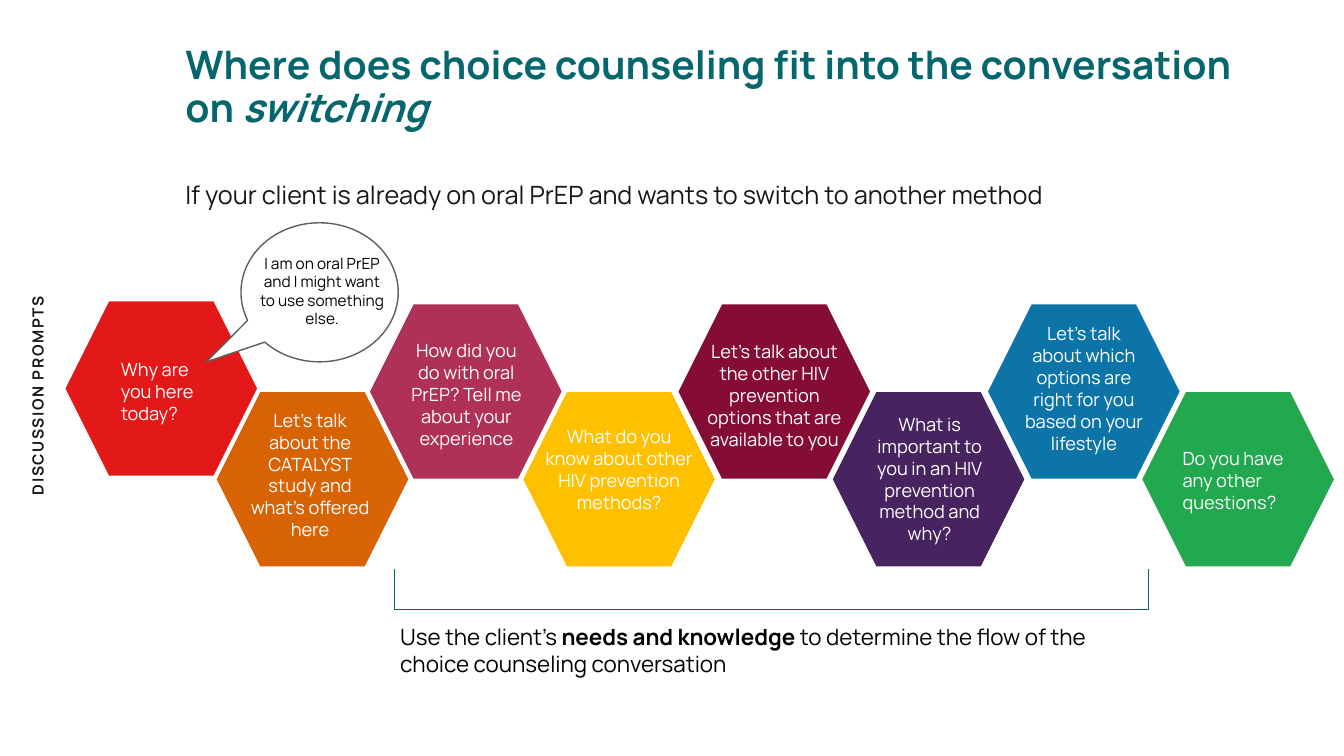
"""Build the slide on choice counseling when a client wants to switch method."""
from pptx import Presentation
from pptx.dml.color import RGBColor
from pptx.enum.shapes import MSO_SHAPE
from pptx.enum.text import MSO_ANCHOR, PP_ALIGN
from pptx.util import Inches, Pt

TEAL = RGBColor(0x05, 0x67, 0x6D)
INK = RGBColor(0x18, 0x17, 0x17)
BLACK = RGBColor(0, 0, 0)
WHITE = RGBColor(0xFF, 0xFF, 0xFF)
GRAY = RGBColor(0x62, 0x5E, 0x58)
RED = RGBColor(0xE2, 0x19, 0x18)
ORANGE = RGBColor(0xD7, 0x63, 0x05)
ROSE = RGBColor(0xAF, 0x31, 0x58)
YELLOW = RGBColor(0xFF, 0xC0, 0x00)
MAROON = RGBColor(0x84, 0x0C, 0x36)
PURPLE = RGBColor(0x47, 0x24, 0x5F)
BLUE = RGBColor(0x0D, 0x74, 0xA8)
GREEN = RGBColor(0x22, 0xA8, 0x4F)

FONT = "Manrope"
LEFT, CENTER = PP_ALIGN.LEFT, PP_ALIGN.CENTER
HEXAGON_SIZE = (1.9, 1.73)
LOWER_ROW_DROP = 0.87

TITLE = [
    ("Where does choice counseling fit into the conversation on ", {"bold": True}),
    ("switching", {"bold": True, "italic": True}),
]
SUBTITLE = [("If your client is already on oral PrEP and wants to switch to another method", {})]
ADVICE = [
    ("Use the client’s ", {}),
    ("needs and knowledge", {"bold": True}),
    (" to determine the flow of the choice counseling conversation", {}),
]
ANSWER = [("I am on oral PrEP and I might want to use something else.", {})]
SIDE_LABEL = [("DISCUSSION PROMPTS", {"bold": True})]

# Each prompt: hexagon left, upper-row top, color, text frame, alignment, wording
PROMPTS = [
    (0.65, 2.99, RED, (1.1, 3.51, 1.14, 0.75), LEFT, "Why are you here today?"),
    (2.15, 3.02, ORANGE, (2.36, 4.01, 1.43, 1.63), CENTER,
     "Let’s talk about the CATALYST study and what’s offered here"),
    (3.67, 3.02, ROSE, (3.92, 3.32, 1.41, 1.19), CENTER,
     "How did you do with oral PrEP? Tell me about your experience"),
    (5.19, 3.02, YELLOW, (5.29, 4.17, 1.7, 1.19), CENTER,
     "What do you know about other HIV prevention methods?"),
    (6.73, 3.02, MAROON, (6.89, 3.33, 1.58, 1.41), CENTER,
     "Let’s talk about the other HIV prevention options that are available to you"),
    (8.26, 3.02, PURPLE, (8.53, 4.05, 1.38, 1.41), CENTER,
     "What is important to you in an HIV prevention method and why?"),
    (9.8, 3.02, BLUE, (10.06, 3.15, 1.38, 1.41), CENTER,
     "Let’s talk about which options are right for you based on your lifestyle"),
    (11.33, 3.02, GREEN, (11.63, 4.39, 1.52, 0.75), LEFT,
     "Do you have any other questions?"),
]


def add_text(page, frame, spans, size, color, align=LEFT):
    """Add a wrapping text box of one paragraph and return it."""
    box = page.shapes.add_textbox(*map(Inches, frame))
    box.text_frame.word_wrap = True
    para = box.text_frame.paragraphs[0]
    para.alignment = align
    for wording, extra in spans:
        span = para.add_run()
        span.text = wording
        for name, value in {"name": FONT, "size": Pt(size), **extra}.items():
            setattr(span.font, name, value)
        span.font.color.rgb = color
    return box


def add_figure(page, kind, frame, fill=None, line=None, weight=1, adjustments=()):
    """Add a preset shape without shadow and return it."""
    figure = page.shapes.add_shape(kind, *map(Inches, frame))
    figure.shadow.inherit = False
    if fill is None:
        figure.fill.background()
    else:
        figure.fill.solid()
        figure.fill.fore_color.rgb = fill
    if line is None:
        figure.line.fill.background()
    else:
        figure.line.color.rgb = line
        figure.line.width = Pt(weight)
    for index, value in enumerate(adjustments):
        figure.adjustments[index] = value
    return figure


def main():
    """Draw the slide and save it."""
    deck = Presentation()
    deck.slide_width, deck.slide_height = Inches(13.33), Inches(7.5)
    page = deck.slides.add_slide(deck.slide_layouts[6])

    title = add_text(page, (0.96, 0.25, 11.48, 1.25), TITLE, 28, TEAL)
    title.text_frame.margin_left = Inches(0.88)
    title.text_frame.vertical_anchor = MSO_ANCHOR.MIDDLE
    title.text_frame.paragraphs[0].line_spacing = 0.9
    add_text(page, (1.74, 1.73, 10.92, 0.4), SUBTITLE, 18, INK)

    for index, (left, top, color, *_) in enumerate(PROMPTS):
        row_top = top + index % 2 * LOWER_ROW_DROP
        add_figure(page, MSO_SHAPE.HEXAGON, (left, row_top, *HEXAGON_SIZE), color)
    for *_, frame, align, wording in PROMPTS:
        add_text(page, frame, [(wording, {})], 13, WHITE, align)

    bracket = add_figure(page, MSO_SHAPE.RIGHT_BRACKET, (7.45, 2.11, 0.4, 7.47),
                         line=TEAL, weight=0.5, adjustments=(0,))
    bracket.rotation = 90
    add_text(page, (3.87, 6.13, 7.65, 0.64), ADVICE, 16, BLACK)

    add_figure(page, MSO_SHAPE.OVAL_CALLOUT, (2.39, 2.21, 1.56, 1.38),
               WHITE, GRAY, adjustments=(-0.72, 0.5))
    add_text(page, (2.48, 2.47, 1.43, 0.84), ANSWER, 11, BLACK, CENTER)

    label = add_text(page, (-1.26, 3.23, 3.27, 0.29), SIDE_LABEL, 11, INK)
    label.rotation = 270
    label.text_frame.paragraphs[0].runs[0].font._element.set("spc", "110")

    deck.save("out.pptx")


if __name__ == "__main__":
    main()
